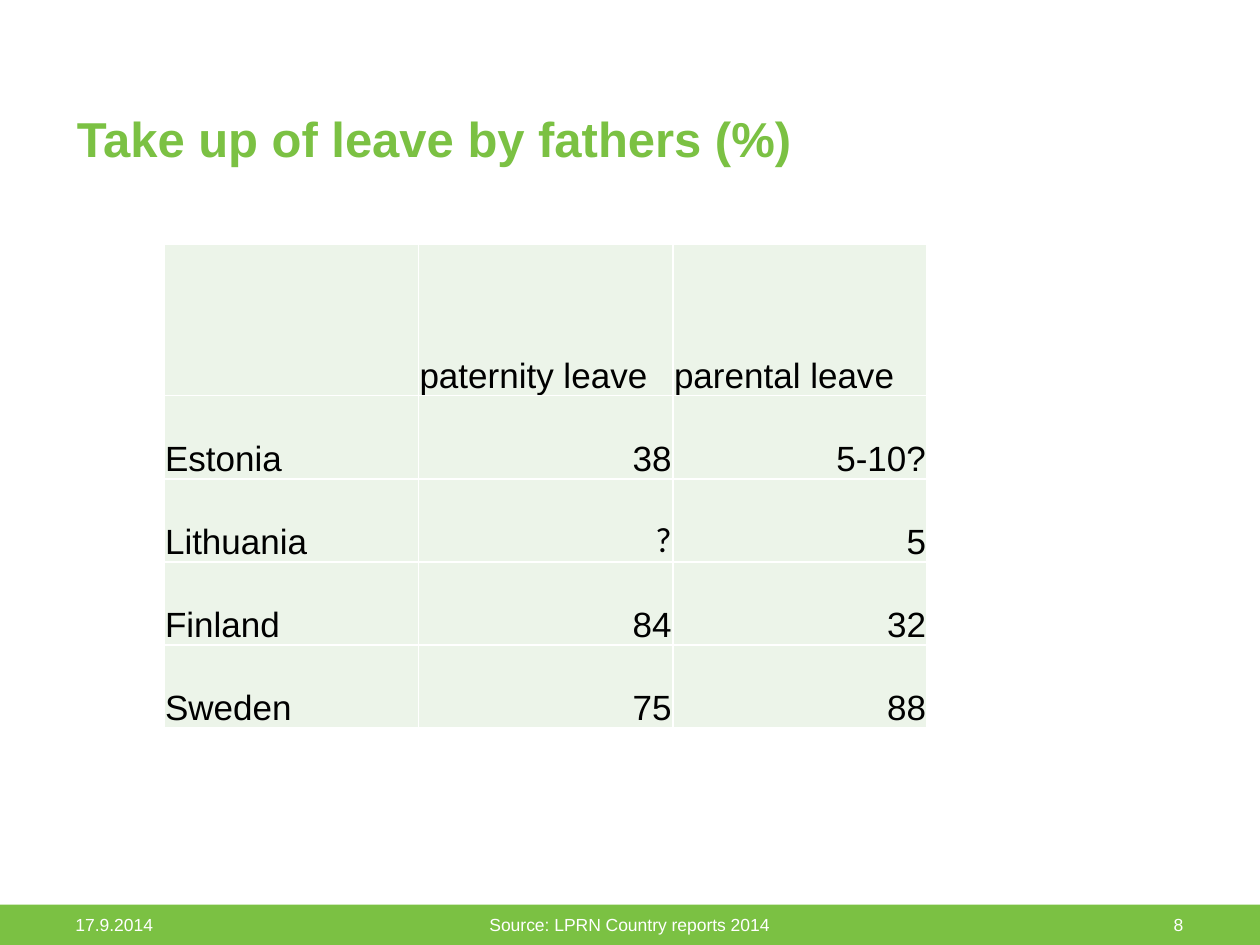
from lxml.etree import SubElement
from pptx import Presentation
from pptx.dml.color import RGBColor
from pptx.enum.shapes import MSO_SHAPE
from pptx.enum.text import MSO_ANCHOR, MSO_AUTO_SIZE, PP_ALIGN
from pptx.oxml.ns import qn
from pptx.util import Inches, Pt

GREEN, PALE, WHITE, BLACK = "7BC143", "ECF4E9", "FFFFFF", "000000"

ROWS = [
    ["", "paternity leave", "parental leave"],
    ["Estonia", "38", "5-10?"],
    ["Lithuania", "?", "5"],
    ["Finland", "84", "32"],
    ["Sweden", "75", "88"],
]
FOOTER = [
    ("17.9.2014", 0.5, 1.19, PP_ALIGN.LEFT),
    ("Source: LPRN Country reports 2014", 1.69, 6.61, PP_ALIGN.CENTER),
    ("8", 8.31, 1.18, PP_ALIGN.RIGHT),
]


def rgb(value):
    return RGBColor.from_string(value)


def write(tf, text, size, color, align=PP_ALIGN.LEFT, font="Arial", bold=False):
    p = tf.paragraphs[0]
    p.alignment = align
    r = p.add_run()
    r.text = text
    formats = {"size": Pt(size), "name": font, "bold": bold}
    for name, value in formats.items():
        setattr(r.font, name, value)
    r.font.color.rgb = rgb(color)
    return p


def add_title(s, text):
    sp = s.shapes.title
    box = {"left": 0.51, "top": 0.28, "width": 8.98, "height": 1.1}
    for name, value in box.items():
        setattr(sp, name, Inches(value))
    tf = sp.text_frame
    tf.auto_size = MSO_AUTO_SIZE.NONE
    tf.vertical_anchor = MSO_ANCHOR.BOTTOM
    write(tf, text, 28, GREEN, bold=True).line_spacing = 0.85


def add_bar(s):
    sp = s.shapes.add_shape(MSO_SHAPE.RECTANGLE, 0, Inches(7.18), Inches(10), Inches(0.32))
    sp.shadow.inherit = False
    sp.fill.solid()
    sp.fill.fore_color.rgb = rgb(GREEN)
    sp.line.fill.background()


def add_footer_text(s, text, left, width, align):
    sp = s.shapes.add_textbox(Inches(left), Inches(7.22), Inches(width), Inches(0.24))
    tf = sp.text_frame
    tf.word_wrap = True
    tf.vertical_anchor = MSO_ANCHOR.MIDDLE
    write(tf, text, 10, WHITE, align)


def format_cell(cell):
    # Borders come before the fill in the cell properties
    tcPr = cell._tc.get_or_add_tcPr()
    for side in ("a:lnL", "a:lnR", "a:lnT", "a:lnB"):
        ln = SubElement(tcPr, qn(side), w=str(Pt(1)))
        fill = SubElement(ln, qn("a:solidFill"))
        SubElement(fill, qn("a:srgbClr"), val=WHITE)
    cell.fill.solid()
    cell.fill.fore_color.rgb = rgb(PALE)
    cell.vertical_anchor = MSO_ANCHOR.BOTTOM
    margins = {"left": 0.01, "right": 0.01, "top": 0.01, "bottom": 0}
    for side, value in margins.items():
        setattr(cell, f"margin_{side}", Inches(value))


def add_leave_table(s):
    frame = s.shapes.add_table(len(ROWS), len(ROWS[0]), Inches(1.3), Inches(1.94),
                               Inches(6.06), Inches(3.86))
    table = frame.table
    for column in table.columns:
        column.width = Inches(2.02)
    for i, values in enumerate(ROWS):
        table.rows[i].height = Inches(0.66 if i else 1.2)
        for j, text in enumerate(values):
            cell = table.cell(i, j)
            format_cell(cell)
            if text:
                align = PP_ALIGN.RIGHT if i and j else PP_ALIGN.LEFT
                font = "Calibri" if text == "?" else "Arial"
                write(cell.text_frame, text, 20, BLACK, align, font)


def main():
    prs = Presentation()
    prs.slide_width, prs.slide_height = Inches(10), Inches(7.5)
    s = prs.slides.add_slide(prs.slide_layouts[5])

    # Footer band
    add_bar(s)
    for item in FOOTER:
        add_footer_text(s, *item)

    # Title and table
    add_title(s, "Take up of leave by fathers (%)")
    add_leave_table(s)

    prs.save("out.pptx")


if __name__ == "__main__":
    main()
